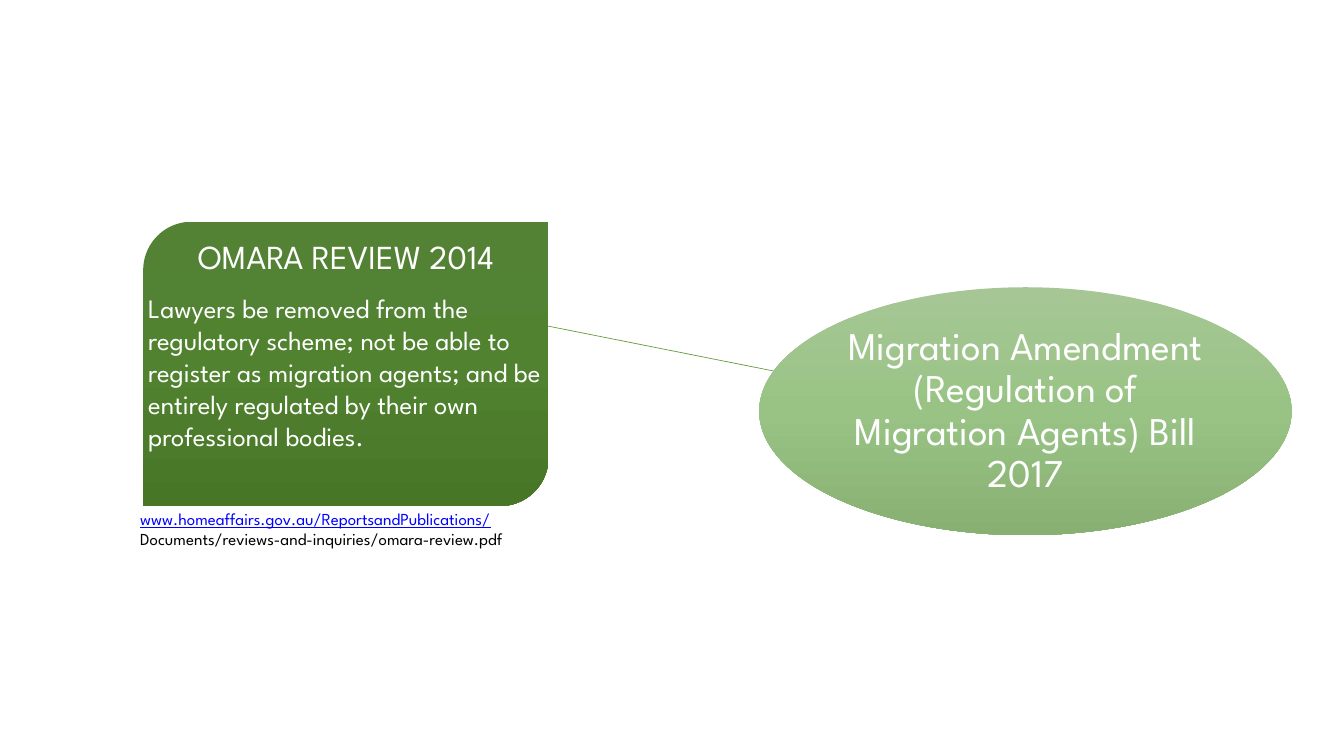
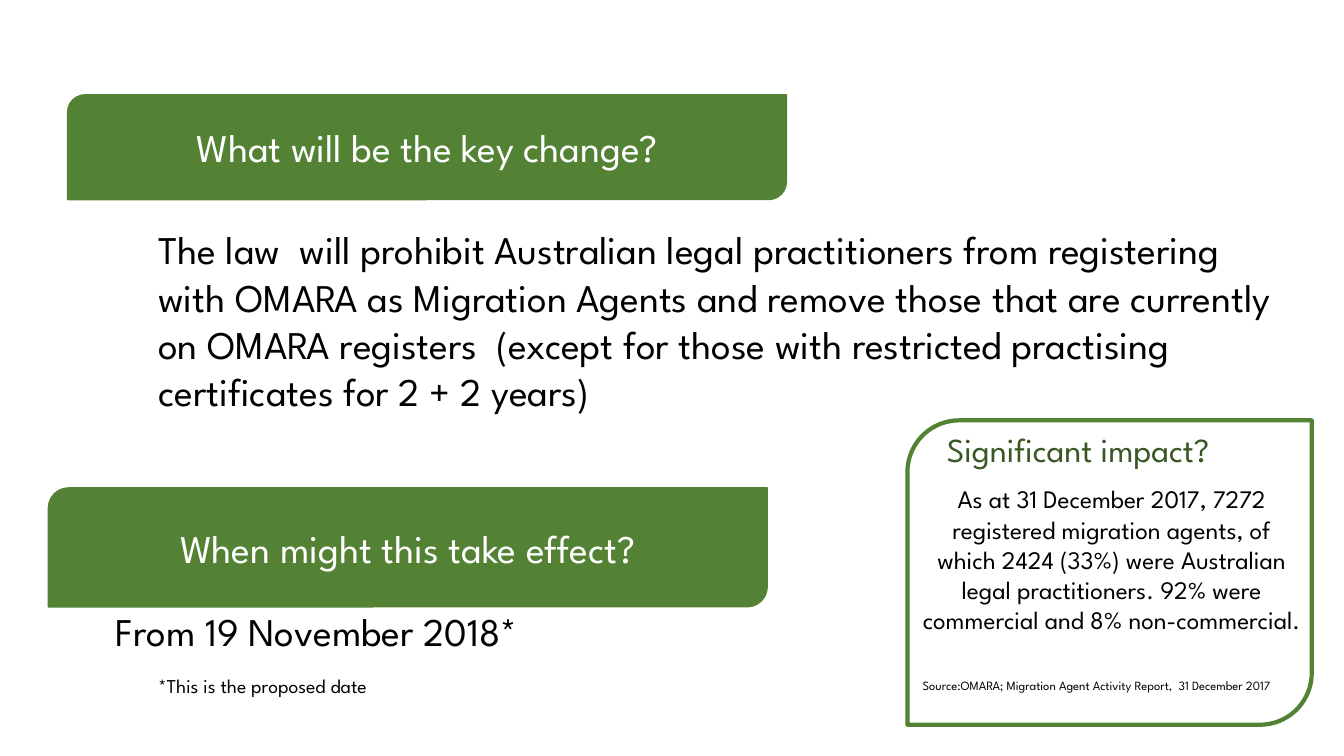
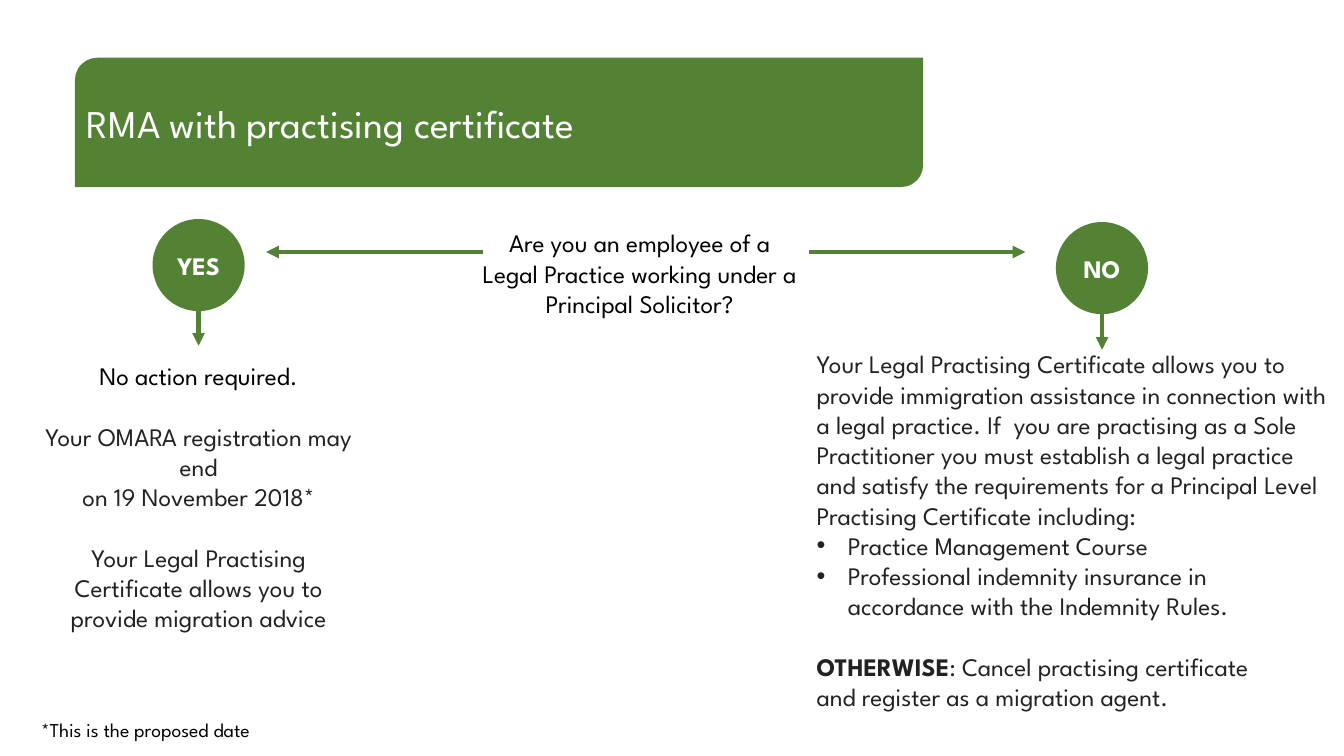
from copy import deepcopy
from lxml.etree import SubElement
from pptx import Presentation
from pptx.dml.color import RGBColor as Rgb
from pptx.enum.shapes import MSO_CONNECTOR as Link, MSO_SHAPE as Form
from pptx.enum.text import MSO_ANCHOR as Anchor, PP_ALIGN as Align
from pptx.oxml.ns import qn
from pptx.util import Inches, Pt


class Theme:
    font = "League Spartan"
    green = "548235"
    thin = "659C40"
    dark = "385724"
    white = "FFFFFF"
    black = "000000"
    grey = "222222"
    blue = "0000FF"
    deep = ["548235", "518230", "477627"]
    pale = ["A6C795", "99C385", "87B072"]
    big = 28
    head = 24
    card = 19
    body = 18
    note = 14
    small = 12
    tiny = 9
    gap = 21.6
    inset = 0.05


def place(page, area, lines=(), size=Theme.body, tint=Theme.black,
          side=Align.LEFT, form=None, fill=None, edge=0):
    area = [Inches(n) for n in area]
    if form is None:
        item = page.shapes.add_textbox(*area)
    else:
        item = page.shapes.add_shape(form, *area)
        item.shadow.inherit = False
        if form == Form.ROUND_2_DIAG_RECTANGLE:
            item.adjustments[0] = 0.17
        if fill is None:
            item.fill.background()
        elif isinstance(fill, list):
            item.fill.gradient()
            item.fill.gradient_angle = 270
            stops = item._element.spPr.find(".//" + qn("a:gsLst"))
            stops.append(deepcopy(stops[0]))
            for stop, spot, shade in zip(item.fill.gradient_stops, (0, 0.5, 1), fill):
                stop.position = spot
                stop.color.rgb = Rgb.from_string(shade)
        else:
            item.fill.solid()
            item.fill.fore_color.rgb = Rgb.from_string(fill)
        if edge:
            item.line.color.rgb = Rgb.from_string(Theme.green)
            item.line.width = Pt(edge)
        else:
            item.line.fill.background()
    frame = item.text_frame
    frame.word_wrap = True
    frame.vertical_anchor = Anchor.MIDDLE if form else Anchor.TOP
    frame.margin_left = frame.margin_right = Inches(Theme.inset)
    frame.margin_top = frame.margin_bottom = Inches(Theme.inset)
    for n, line in enumerate(lines):
        para = frame.add_paragraph() if n else frame.paragraphs[0]
        para.alignment = side
        for text in line:
            run = para.add_run()
            run.text = text
            run.font.name = Theme.font
            run.font.size = Pt(size)
            run.font.color.rgb = Rgb.from_string(tint)
    return frame


deck = Presentation()
deck.slide_width, deck.slide_height = Inches(13.33), Inches(7.5)
review, change, advice = [deck.slides.add_slide(deck.slide_layouts[6]) for n in range(3)]

wires = [
    (review, (5.26, 3.2, 7.87, 3.72), Theme.thin, 0.5, False),
    (advice, (10.93, 3.05, 10.93, 3.47), Theme.green, 3, True),
    (advice, (1.97, 3.01, 1.97, 3.43), Theme.green, 3, True),
    (advice, (4.79, 2.5, 2.64, 2.5), Theme.green, 3, True),
    (advice, (8.02, 2.5, 10.17, 2.5), Theme.green, 3, True),
]
for page, ends, tint, width, arrow in wires:
    wire = page.shapes.add_connector(Link.STRAIGHT, *[Inches(n) for n in ends])
    wire.line.color.rgb = Rgb.from_string(tint)
    wire.line.width = Pt(width)
    if arrow:
        SubElement(wire.line._get_or_add_ln(), qn("a:tailEnd"), type="triangle")
    SubElement(wire._element.spPr, qn("a:effectLst"))

bands = [
    (change, (0.67, 0.94, 7.13, 1.04), "What will be the key change?", Align.CENTER),
    (change, (0.48, 4.84, 7.13, 1.18), "When might this take effect?", Align.CENTER),
    (advice, (0.75, 0.58, 8.4, 1.27), "RMA with practising certificate", Align.LEFT),
]
for page, area, text, side in bands:
    place(page, area, [[text]], Theme.big, Theme.white, side,
          Form.ROUND_2_DIAG_RECTANGLE, Theme.green, 1)

for page, left, top in [(change, 1.52, 6.64), (advice, 0.36, 7.07)]:
    place(page, (left, top, 2.52, 0.34), [["*This is the proposed date"]], Theme.note)

place(review, (1.42, 2.2, 4.02, 2.82), form=Form.ROUND_2_DIAG_RECTANGLE, fill=Theme.deep)
bill = place(review, (7.53, 2.85, 5.28, 2.46),
             [["Migration Amendment (Regulation of Migration Agents) Bill 2017"]],
             Theme.big, Theme.white, Align.CENTER, Form.OVAL, Theme.pale)
bill.margin_left = bill.margin_right = Inches(0.02)
bill.paragraphs[0].line_spacing = 0.9
bill.paragraphs[0].space_before = Pt(11)
place(review, (1.5, 2.29, 3.86, 0.54), [["OMARA REVIEW 2014"]],
      Theme.head, Theme.white, Align.CENTER)
place(review, (1.42, 2.85, 4.02, 2.02),
      [["Lawyers be removed from the regulatory scheme; not be able to register as "
        "migration agents; and be entirely regulated by their own professional bodies."]],
      Theme.card, Theme.white)
site = place(review, (1.34, 5, 4.65, 0.52),
             [["www.homeaffairs.gov.au/ReportsandPublications/"],
              ["Documents/reviews-and-inquiries/omara-review.pdf"]], Theme.small)
site.paragraphs[0].runs[0].font.underline = True
site.paragraphs[0].runs[0].font.color.rgb = Rgb.from_string(Theme.blue)

place(change, (1.52, 2.19, 11.22, 1.99),
      [["The law  will prohibit Australian legal practitioners from registering with OMARA "
        "as Migration Agents and remove those that are currently on OMARA registers  "
        "(except for those with restricted practising certificates for 2 + 2 years)"]],
      Theme.big)
place(change, (1.1, 5.98, 9.71, 0.57), [["From 19 November 2018*"]], Theme.big)
place(change, (9, 4.17, 4.01, 3.02), form=Form.ROUND_2_DIAG_RECTANGLE, edge=3)
place(change, (9.34, 4.21, 3.61, 0.5), [["Significant impact?"]], Theme.head, Theme.dark)
place(change, (9.1, 4.75, 3.85, 1.75),
      [["As at 31 December 2017, 7272 registered migration agents, of which 2424 (33%) "
        "were Australian legal practitioners. 92% were commercial and 8% non-commercial."]],
      side=Align.CENTER)
place(change, (9.1, 6.68, 3.85, 0.41),
      [["Source:OMARA; Migration Agent Activity Report,  31 December 2017"]], Theme.tiny)

place(advice, (4.73, 2.21, 3.23, 1.32),
      [["Are you an employee of a Legal Practice working under a Principal Solicitor?"]],
      side=Align.CENTER)
for left, top, text in [(1.52, 2.18, "YES"), (10.48, 2.21, "NO")]:
    disc = place(advice, (left, top, 0.9, 0.9), [[text]], Theme.body, Theme.white,
                 Align.CENTER, Form.OVAL, Theme.green, 1)
    disc.paragraphs[0].runs[0].font.bold = True

yes = place(advice, (0.36, 3.53, 3.22, 2.85),
            [["No action required."],
             ["Your OMARA registration may end"],
             ["on 19 November 2018*"],
             ["Your Legal Practising Certificate allows you to provide migration advice"]],
            tint=Theme.grey, side=Align.CENTER).paragraphs
yes[0].runs[0].font.color.rgb = Rgb.from_string(Theme.black)

no = place(advice, (8.05, 3.41, 5.17, 4.04),
           [["Your Legal Practising Certificate allows you to provide immigration assistance "
             "in connection with a legal practice. If  you are practising as a Sole "
             "Practitioner you must establish a legal practice and satisfy the requirements "
             "for a Principal Level Practising Certificate including:"],
            ["Practice Management Course"],
            ["Professional indemnity insurance in accordance with the Indemnity Rules."],
            ["OTHERWISE", ": Cancel practising certificate"],
            ["and register as a migration agent."]], tint=Theme.grey).paragraphs
no[3].runs[0].font.bold = True
for para in no[1:3]:
    form = para._p.get_or_add_pPr()
    form.set("marL", str(Inches(0.31)))
    form.set("indent", str(-Inches(0.31)))
    SubElement(form, qn("a:buFont"), typeface="Arial")
    SubElement(form, qn("a:buChar"), char="•")
for para in (yes[1], yes[3], no[3]):
    para.space_before = Pt(Theme.gap)

deck.save("out.pptx")
